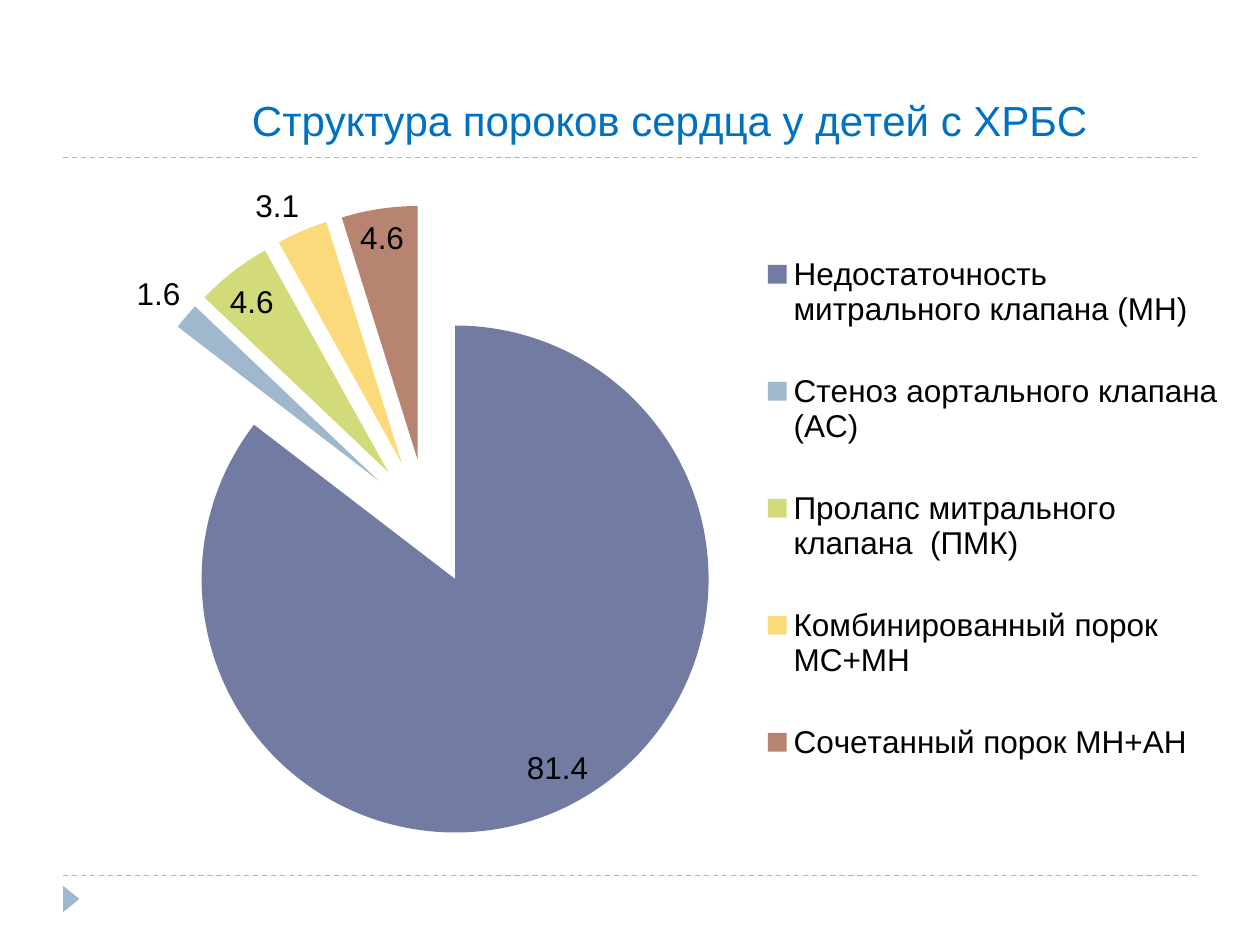
from lxml import etree
from pptx import Presentation
from pptx.chart.data import CategoryChartData
from pptx.dml.color import RGBColor
from pptx.enum.chart import XL_CHART_TYPE, XL_LABEL_POSITION, XL_LEGEND_POSITION
from pptx.enum.dml import MSO_LINE
from pptx.enum.shapes import MSO_CONNECTOR, MSO_SHAPE
from pptx.oxml.ns import qn
from pptx.util import Inches, Pt

PIE = XL_CHART_TYPE.PIE_EXPLODED
BEST_FIT = XL_LABEL_POSITION.BEST_FIT
LEGEND_RIGHT = XL_LEGEND_POSITION.RIGHT
DASH = MSO_LINE.DASH
STRAIGHT = MSO_CONNECTOR.STRAIGHT
TRIANGLE = MSO_SHAPE.ISOSCELES_TRIANGLE

FONT = "Arial"
CHART_WIDTH = 9.37
CHART_HEIGHT = 6.37
COLORS = {
    "title": "0070C0",
    "text": "000000",
    "accent": "9FB8CD",
    "mitral": "727CA3",
    "prolapse": "D2DA7A",
    "combined": "FADA7A",
    "mixed": "B88472",
}
DEFECTS = [
    ("Недостаточность митрального клапана (МН)", 81.4, "mitral"),
    ("Стеноз аортального клапана  (АС)", 1.6, "accent"),
    ("Пролапс митрального клапана  (ПМК)", 4.6, "prolapse"),
    ("Комбинированный порок МС+МН ", 3.1, "combined"),
    ("Сочетанный порок МН+АН ", 4.6, "mixed"),
]


def color(name):
    return RGBColor.from_string(COLORS[name])


def style_font(font, size, name):
    font.name = FONT
    font.size = Pt(size)
    font.bold = False
    font.color.rgb = color(name)


def add_rule(page, top):
    rule = page.shapes.add_connector(
        STRAIGHT, Inches(0.5), Inches(top), Inches(9.5), Inches(top))
    rule.line.color.rgb = color("accent")
    rule.line.width = Pt(0.75)
    rule.line.dash_style = DASH
    etree.SubElement(rule._element.spPr, qn("a:effectLst"))


def add_marker(page):
    marker = page.shapes.add_shape(
        TRIANGLE, Inches(0.46), Inches(7.07), Inches(0.21), Inches(0.13))
    marker.rotation = 90
    marker.shadow.inherit = False
    marker.fill.solid()
    marker.fill.fore_color.rgb = color("accent")
    marker.line.fill.background()


def place(element, following, left, top, size=(), target=None):
    for old in element.findall(qn("c:layout")):
        element.remove(old)
    layout = etree.Element(qn("c:layout"))
    manual = etree.SubElement(layout, qn("c:manualLayout"))
    settings = {"layoutTarget": target} if target else {}
    settings.update(xMode="edge", yMode="edge",
                    x=left / CHART_WIDTH, y=top / CHART_HEIGHT)
    if size:
        settings.update(w=size[0] / CHART_WIDTH, h=size[1] / CHART_HEIGHT)
    for tag, value in settings.items():
        etree.SubElement(manual, qn("c:" + tag)).set("val", str(value))
    element.find(qn(following)).addprevious(layout)


def add_title(chart):
    chart.has_title = True
    title = chart.chart_title
    title.text_frame.text = "Структура пороков сердца у детей с ХРБС"
    style_font(title.text_frame.paragraphs[0].runs[0].font, 24, "title")
    title.include_in_layout = False
    place(title._element, "c:overlay", 1.43, 0.08)


def add_legend(chart):
    chart.has_legend = True
    legend = chart.legend
    legend.position = LEGEND_RIGHT
    legend.include_in_layout = False
    style_font(legend.font, 18, "text")
    place(legend._element, "c:overlay", 5.67, 1.07, (3.7, 4.73))


def add_defect_chart(page):
    data = CategoryChartData()
    data.categories = [label for label, _, _ in DEFECTS]
    data.add_series("Series 1", [value for _, value, _ in DEFECTS])
    chart = page.shapes.add_chart(
        PIE, Inches(0.51), Inches(0.6),
        Inches(CHART_WIDTH), Inches(CHART_HEIGHT), data).chart
    style_font(chart.font, 18, "text")
    add_title(chart)
    add_legend(chart)

    plot = chart.plots[0]
    plot.vary_by_categories = True
    plot.has_data_labels = True
    labels = plot.data_labels
    labels.show_value = True
    labels.show_percentage = False
    labels.number_format = "0.0"
    labels.number_format_is_linked = False
    labels.position = BEST_FIT
    style_font(labels.font, 18, "text")

    series = plot.series[0]
    series._element.find(qn("c:explosion")).set("val", "25")
    for index, (_, _, name) in enumerate(DEFECTS):
        fill = series.points[index].format.fill
        fill.solid()
        fill.fore_color.rgb = color(name)
    area = plot._element.getparent()
    place(area, "c:pieChart", 0.09, 1.03, (5.58, 5.03), "inner")


def main():
    deck = Presentation()
    deck.slide_width = Inches(10)
    deck.slide_height = Inches(7.5)
    page = deck.slides.add_slide(deck.slide_layouts[6])
    for top in (6.95, 1.25):
        add_rule(page, top)
    add_marker(page)
    add_defect_chart(page)
    deck.save("out.pptx")


if __name__ == "__main__":
    main()
